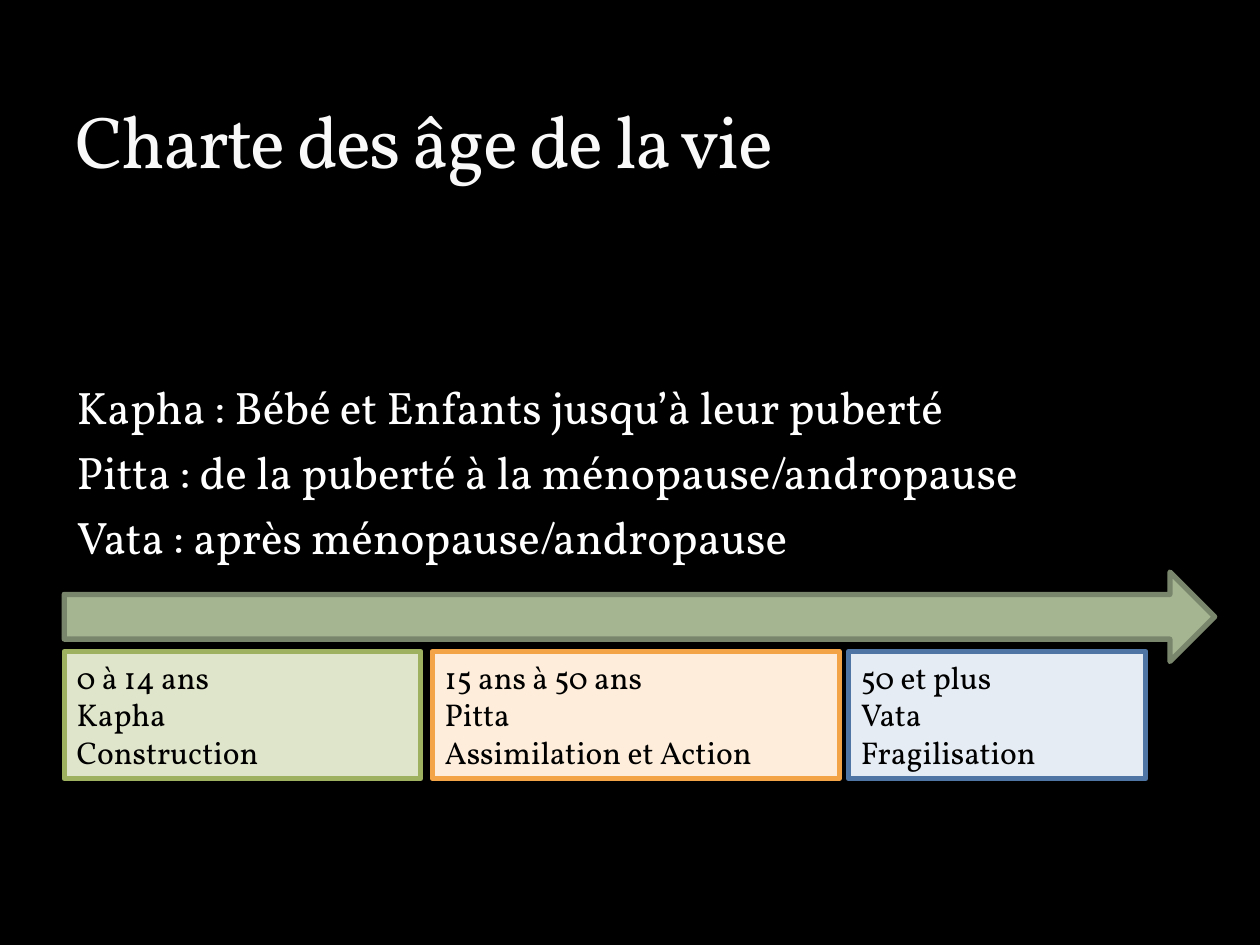
from dataclasses import dataclass

from pptx import Presentation
from pptx.dml.color import RGBColor
from pptx.enum.shapes import MSO_SHAPE as Preset
from pptx.enum.text import MSO_ANCHOR as Anchor, MSO_AUTO_SIZE as AutoSize, PP_ALIGN as Align
from pptx.shapes.autoshape import Shape
from pptx.slide import Slide
from pptx.util import Pt


@dataclass(frozen=True)
class Theme:
    font: str = "Vollkorn"
    background: str = "000000"
    title: str = "F9F9F9"
    body: str = "FFFFFF"
    stage_text: str = "000000"
    arrow_fill: str = "A5B592"
    arrow_line: str = "7A866C"
    title_size: float = 42
    body_size: float = 26
    stage_size: float = 18
    line_width: float = 3


@dataclass(frozen=True)
class Box:
    left: float
    top: float
    width: float
    height: float

    def lengths(self) -> tuple[Pt, Pt, Pt, Pt]:
        return Pt(self.left), Pt(self.top), Pt(self.width), Pt(self.height)


@dataclass(frozen=True)
class Stage:
    left: float
    width: float
    fill: str
    line: str
    lines: tuple[str, ...]


THEME = Theme()
TITLE_BOX = Box(36, 12.2, 648, 95.8)
BODY_BOX = Box(36.7, 213.1, 648, 139)
ARROW_BOX = Box(36.7, 326.9, 657.4, 51.1)
STAGE_TOP, STAGE_HEIGHT = 372.2, 72.7
DOSHAS = (
    "Kapha : Bébé et Enfants jusqu’à leur puberté",
    "Pitta : de la puberté à la ménopause/andropause",
    "Vata : après ménopause/andropause",
)
STAGES = (
    Stage(36.7, 203.8, "DFE5CA", "9EB160", ("0 à 14 ans", "Kapha", "Construction")),
    Stage(247, 232.6, "FDEDDA", "F3A447",
          ("15 ans à 50 ans", "Pitta", "Assimilation et Action")),
    Stage(484.9, 169.9, "E6ECF3", "4E75A3", ("50 et plus", "Vata", "Fragilisation")),
)


def write_text(shape: Shape, lines: tuple[str, ...], *, size: float, color: str,
               anchor: Anchor = Anchor.TOP, space_before: float = 0,
               spacing: float = 0) -> None:
    frame = shape.text_frame
    frame.word_wrap = True
    frame.vertical_anchor = anchor
    for index, line in enumerate(lines):
        paragraph = frame.add_paragraph() if index else frame.paragraphs[0]
        paragraph.alignment = Align.LEFT
        if index and space_before:
            paragraph.space_before = Pt(space_before)
        run = paragraph.add_run()
        run.text = line
        run.font.name = THEME.font
        run.font.size = Pt(size)
        run.font.color.rgb = RGBColor.from_string(color)
        if spacing:
            run.font._element.set("spc", str(round(spacing * 100)))


def draw_shape(slide: Slide, preset: Preset, box: Box, fill: str, line: str) -> Shape:
    shape = slide.shapes.add_shape(preset, *box.lengths())
    shape.shadow.inherit = False
    shape.fill.solid()
    shape.fill.fore_color.rgb = RGBColor.from_string(fill)
    shape.line.color.rgb = RGBColor.from_string(line)
    shape.line.width = Pt(THEME.line_width)
    return shape


def draw_stage(slide: Slide, stage: Stage) -> None:
    box = Box(stage.left, STAGE_TOP, stage.width, STAGE_HEIGHT)
    shape = draw_shape(slide, Preset.RECTANGLE, box, stage.fill, stage.line)
    write_text(shape, stage.lines, size=THEME.stage_size, color=THEME.stage_text)
    shape.text_frame.auto_size = AutoSize.SHAPE_TO_FIT_TEXT


def main() -> None:
    """Build the slide about the ages of life."""
    presentation = Presentation()
    presentation.slide_width, presentation.slide_height = Pt(720), Pt(540)
    slide = presentation.slides.add_slide(presentation.slide_layouts[6])
    slide.background.fill.solid()
    slide.background.fill.fore_color.rgb = RGBColor.from_string(THEME.background)

    title = slide.shapes.add_textbox(*TITLE_BOX.lengths())
    write_text(title, ("Charte des âge de la vie",), size=THEME.title_size,
               color=THEME.title, anchor=Anchor.BOTTOM, spacing=-1)
    body = slide.shapes.add_textbox(*BODY_BOX.lengths())
    write_text(body, DOSHAS, size=THEME.body_size, color=THEME.body, space_before=6)

    draw_shape(slide, Preset.RIGHT_ARROW, ARROW_BOX, THEME.arrow_fill, THEME.arrow_line)
    for stage in STAGES:
        draw_stage(slide, stage)
    presentation.save("out.pptx")


if __name__ == "__main__":
    main()
